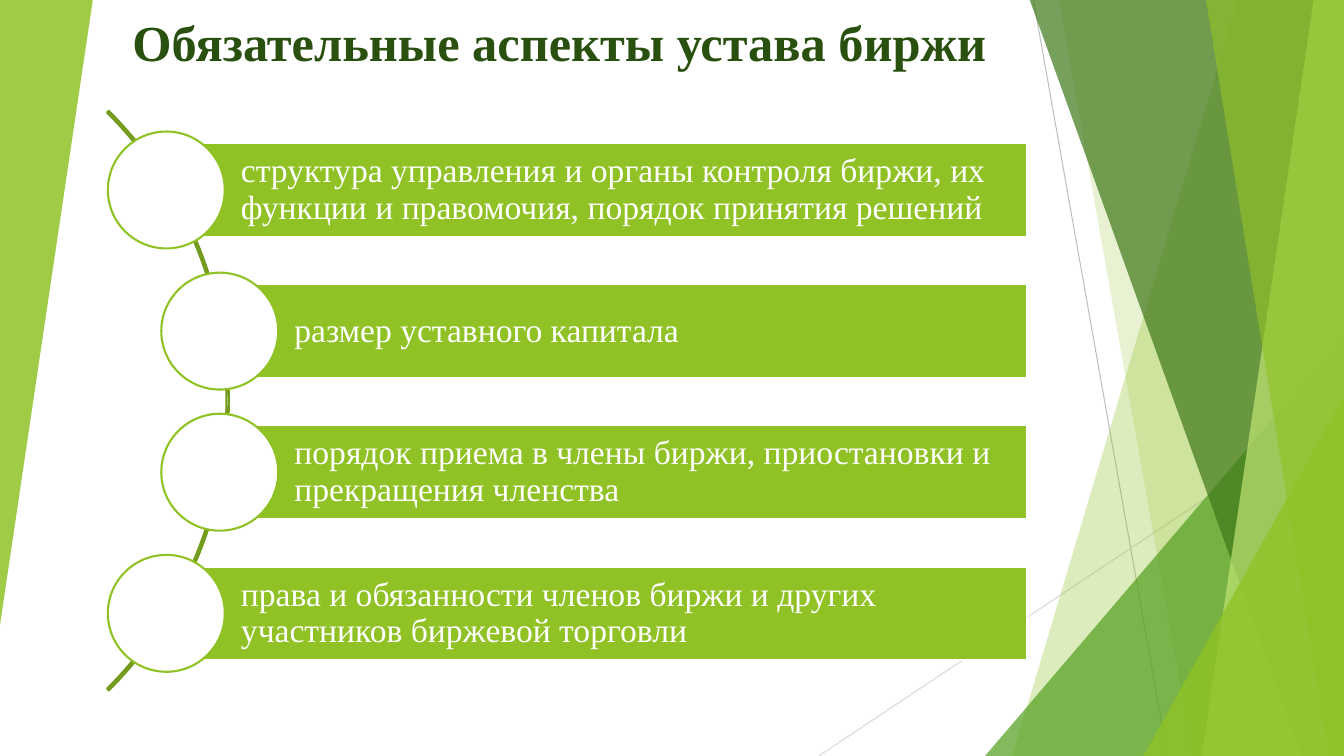
from lxml.etree import SubElement
from pptx import Presentation
from pptx.dml.color import RGBColor
from pptx.enum.shapes import MSO_CONNECTOR, MSO_SHAPE
from pptx.enum.text import MSO_ANCHOR, MSO_AUTO_SIZE, PP_ALIGN
from pptx.oxml.ns import qn
from pptx.util import Inches, Pt

WIDE, HIGH = 13.33, 7.5
HUES = {
    "lime": "90C226", "leaf": "54A021", "moss": "3F7819", "pale": "C0E474",
    "olive": "739B1E", "dark": "2A5010", "white": "FFFFFF",
    "gray": "BFBFBF", "mist": "D9D9D9",
}
FONTS = {
    "title": {"name": "Times New Roman", "size": Pt(36), "bold": True},
    "item": {"name": "Times New Roman", "size": Pt(24), "bold": False},
}
FRAMES = {
    "title": {"word_wrap": True, "auto_size": MSO_AUTO_SIZE.NONE,
              "vertical_anchor": MSO_ANCHOR.BOTTOM},
    "item": {"word_wrap": True, "vertical_anchor": MSO_ANCHOR.MIDDLE,
             "margin_left": Inches(0.74), "margin_right": Inches(0.07),
             "margin_top": Inches(0.07), "margin_bottom": Inches(0.07)},
}
PARAS = {
    "title": {"alignment": PP_ALIGN.CENTER},
    "item": {"alignment": PP_ALIGN.LEFT, "line_spacing": 0.9},
}


def apply(target, values):
    for name, value in values.items():
        setattr(target, name, value)


class Deck:
    def __init__(self):
        self.show = Presentation()
        self.show.slide_width = Inches(WIDE)
        self.show.slide_height = Inches(HIGH)
        self.slide = self.show.slides.add_slide(self.show.slide_layouts[0])
        self.shapes = self.slide.shapes

    def color(self, hue):
        return RGBColor.from_string(HUES[hue])

    def paint(self, shape, fill=None, alpha=100, line=None):
        shape.shadow.inherit = False
        if fill:
            shape.fill.solid()
            shape.fill.fore_color.rgb = self.color(fill)
            if alpha < 100:
                tint = next(shape.element.spPr.iter(qn("a:srgbClr")))
                SubElement(tint, qn("a:alpha"), val=str(alpha * 1000))
        else:
            shape.fill.background()
        if line:
            shape.line.color.rgb = self.color(line)
            shape.line.width = Pt(1.5)
        else:
            shape.line.fill.background()
        return shape

    def label(self, shape, text, style, hue):
        frame = shape.text_frame
        apply(frame, FRAMES[style])
        para = frame.paragraphs[0]
        apply(para, PARAS[style])
        run = para.add_run()
        run.text = text
        apply(run.font, FONTS[style])
        run.font.color.rgb = self.color(hue)

    def title(self, text, box):
        title, sub = self.slide.placeholders
        sub.element.getparent().remove(sub.element)
        # Bring the title in front of the backdrop
        title.element.getparent().append(title.element)
        apply(title, dict(zip(("left", "top", "width", "height"), map(Inches, box))))
        self.label(title, text, "title", "dark")

    def line(self, start, end, hue):
        ends = map(Inches, start + end)
        line = self.shapes.add_connector(MSO_CONNECTOR.STRAIGHT, *ends)
        line.line.color.rgb = self.color(hue)
        line.line.width = Pt(0.75)
        SubElement(line.element.spPr, qn("a:effectLst"))

    def band(self, top, foot, hue, alpha):
        spots = [(top, -0.01), (WIDE, -0.01), (WIDE, HIGH), (foot, HIGH)]
        first, *rest = [(Inches(x), Inches(y)) for x, y in spots]
        form = self.shapes.build_freeform(*first)
        form.add_line_segments(rest, close=True)
        self.paint(form.convert_to_shape(), hue, alpha)

    def shape(self, kind, box, tweaks=(), **look):
        shape = self.shapes.add_shape(kind, *map(Inches, box))
        for i, value in enumerate(tweaks):
            shape.adjustments[i] = value
        return self.paint(shape, **look)

    def wedge(self, box, hue, alpha, turn=0):
        shape = self.shape(MSO_SHAPE.ISOSCELES_TRIANGLE, box, [1], fill=hue, alpha=alpha)
        shape.rotation = turn

    def item(self, text, left, top):
        right, tall, size = 10.19, 0.93, 1.16
        bar = self.shape(MSO_SHAPE.RECTANGLE, (left, top, right - left, tall),
                         fill="lime", line="white")
        self.label(bar, text, "item", "white")
        # The circle is centred on the left edge of the bar
        self.shape(MSO_SHAPE.OVAL,
                   (left - size / 2, top + (tall - size) / 2, size, size),
                   fill="white", line="lime")


def main():
    deck = Deck()

    # Backdrop
    deck.line((10.25, 0), (11.58, HIGH), "gray")
    deck.line((WIDE, 4.03), (8.12, HIGH), "mist")
    deck.band(12.28, 10.04, "lime", 30)
    deck.band(10.5, 11.83, "lime", 20)
    deck.wedge((9.77, 3.33, 3.56, 4.17), "leaf", 72)
    deck.band(10.21, 12.91, "moss", 70)
    deck.band(13.03, 11.92, "pale", 70)
    deck.band(11.96, 13.18, "lime", 65)
    deck.wedge((11.34, 3.93, 1.99, 3.57), "lime", 80)
    deck.wedge((0, 0, 0.92, 6.2), "lime", 85, 180)

    # Title
    deck.title("Обязательные аспекты устава биржи", (0.23, 0.03, 10.64, 0.73))

    # Arc with the list along it
    deck.shape(MSO_SHAPE.BLOCK_ARC, (-5.86, -0.09, 8.13, 8.13),
               [189, 27, 0.003], line="olive")
    items = [
        (1.65, "структура управления и органы контроля биржи, их функции и правомочия, "
               "порядок принятия решений"),
        (2.18, "размер уставного капитала"),
        (2.18, "порядок приема в члены биржи, приостановки и прекращения членства"),
        (1.65, "права и обязанности членов биржи и других участников биржевой торговли"),
    ]
    for i, (left, text) in enumerate(items):
        deck.item(text, left, 1.42 + 1.4 * i)

    deck.show.save("out.pptx")


if __name__ == "__main__":
    main()
